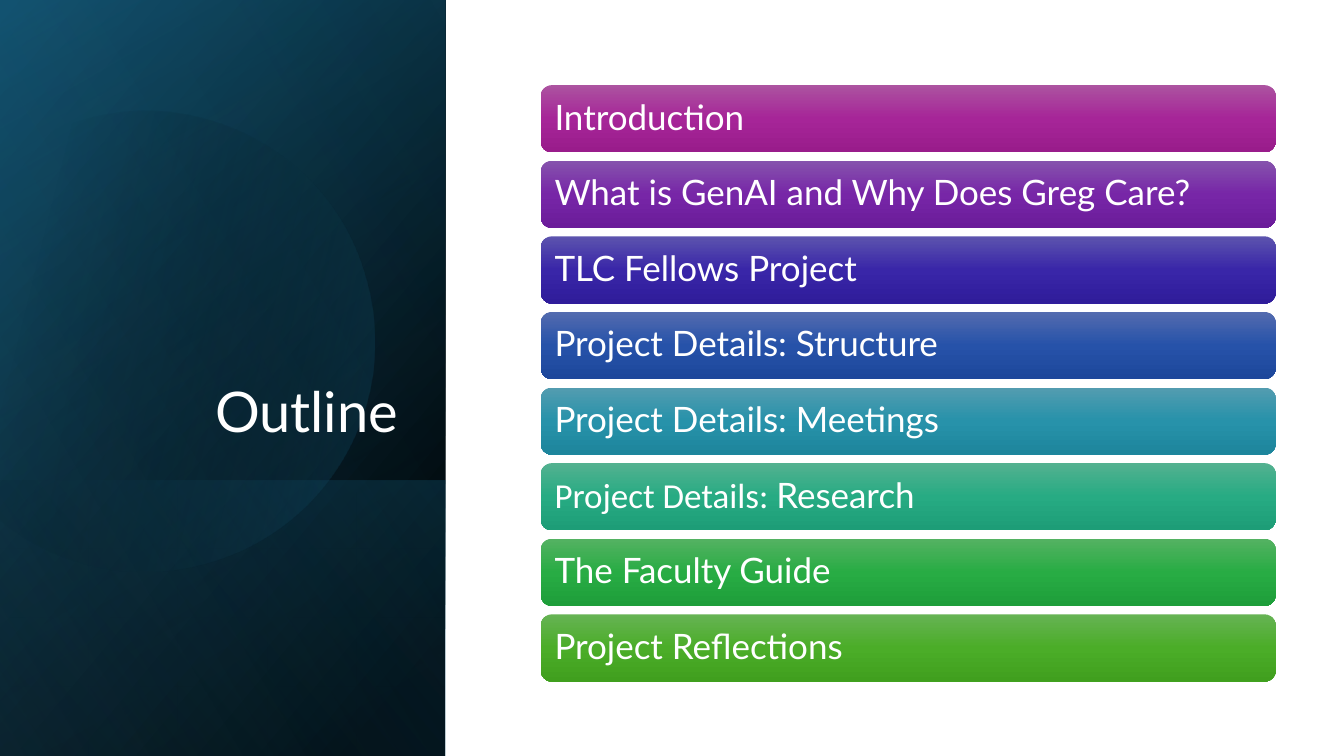
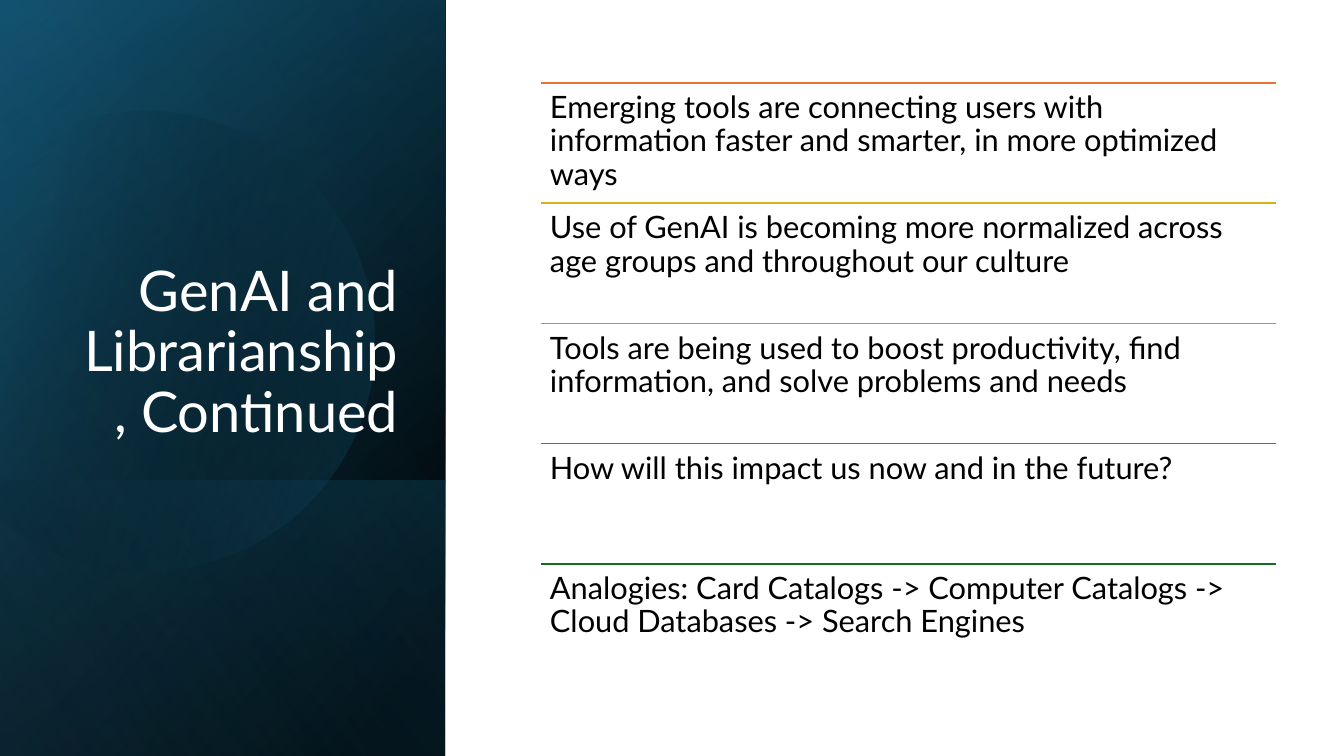
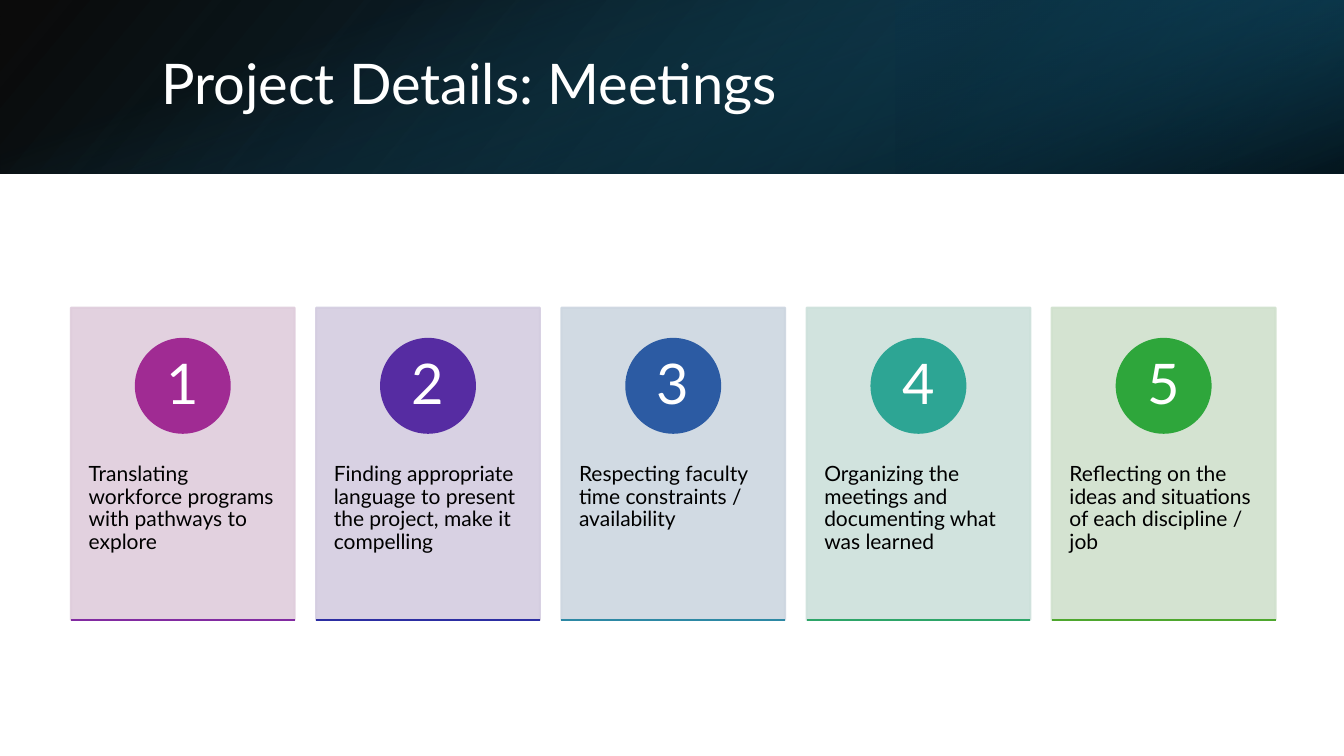
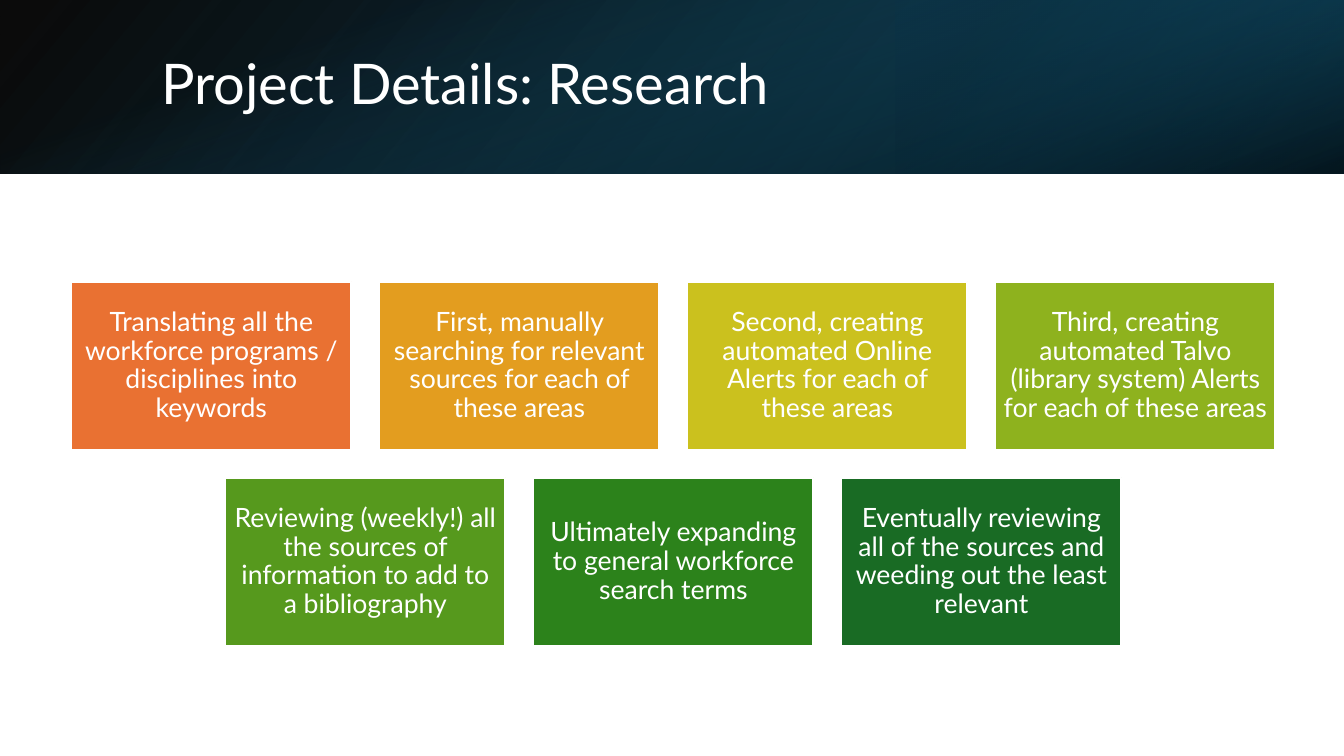
from math import cos, radians, sin

from lxml.etree import SubElement
from pptx import Presentation
from pptx.dml.color import RGBColor
from pptx.enum.shapes import MSO_CONNECTOR, MSO_SHAPE
from pptx.enum.text import MSO_ANCHOR, PP_ALIGN
from pptx.oxml import parse_xml
from pptx.oxml.ns import nsdecls, qn
from pptx.util import Pt

COLORS = {
    "white": "FFFFFF", "black": "000000",
    "navy": "104862", "teal": "156082", "deep": "0B3041", "sky": "46B1E1",
    "magenta_light": "AC53A0", "magenta": "A62598", "magenta_dark": "991C8B",
    "purple_light": "8653AD", "purple": "7726A7", "purple_dark": "6B1C9A",
    "indigo_light": "5C53AE", "indigo": "3926A8", "indigo_dark": "2F1C9A",
    "blue_light": "536BAF", "blue": "2652A9", "blue_dark": "1D479B",
    "cyan_light": "539CB0", "cyan": "2792AA", "cyan_dark": "1D859C",
    "mint_light": "53B190", "mint": "27AB83", "mint_dark": "1D9D77",
    "green_light": "54B262", "green": "28AC44", "green_dark": "1E9E3A",
    "lime_light": "66B354", "lime": "4BAD28", "lime_dark": "409F1E",
    "orange": "E97132", "amber": "E39D1F", "gold": "D8B11D", "yellow": "CBC11E",
    "olive": "8EB21E", "moss": "408E1C", "leaf": "56991D", "grass": "2C821B",
    "forest": "196B24",
    "card1": "DFCDDC", "circle1": "A02B93", "rule1": "822BA1",
    "card2": "D4CDE0", "circle2": "562CA2", "rule2": "2C2EA2",
    "card3": "CDD6E0", "circle3": "2C5BA3", "rule3": "2D88A4",
    "card4": "CDE1DB", "circle4": "2DA594", "rule4": "2DA568",
    "card5": "D0E1CD", "circle5": "2EA63B", "rule5": "4EA72E",
}
FONT = "Lato"

OUTLINE = [
    ("magenta", [("Introduction", FONT)]),
    ("purple", [("What is GenAI and Why Does Greg Care?", FONT)]),
    ("indigo", [("TLC Fellows Project", FONT)]),
    ("blue", [("Project Details: Structure", FONT)]),
    ("cyan", [("Project Details: Meetings", FONT)]),
    ("mint", [("Project Details: ", "Calibri"), ("Research", FONT)]),
    ("green", [("The Faculty Guide", FONT)]),
    ("lime", [("Project Reflections", FONT)]),
]
LIBRARIANSHIP = [
    ("orange", "Emerging tools are connecting users with information faster and smarter, in more optimized ways"),
    ("gold", "Use of GenAI is becoming more normalized across age groups and throughout our culture"),
    ("olive", "Tools are being used to boost productivity, find information, and solve problems and needs"),
    ("moss", "How will this impact us now and in the future?"),
    ("forest", "Analogies: Card Catalogs -> Computer Catalogs -> Cloud Databases -> Search Engines"),
]
MEETINGS = [
    "Translating workforce programs with pathways to explore",
    "Finding appropriate language to present the project, make it compelling",
    "Respecting faculty time constraints / availability",
    "Organizing the meetings and documenting what was learned",
    "Reflecting on the ideas and situations of each discipline / job",
]
RESEARCH = [
    [
        ("orange", "Translating all the workforce programs / disciplines into keywords"),
        ("amber", "First, manually searching for relevant sources for each of these areas"),
        ("yellow", "Second, creating automated Online Alerts for each of these areas"),
        ("olive", "Third, creating automated Talvo (library system) Alerts for each of these areas"),
    ],
    [
        ("leaf", "Reviewing (weekly!) all the sources of information to add to a bibliography"),
        ("grass", "Ultimately expanding to general workforce search terms"),
        ("forest", "Eventually reviewing all of the sources and weeding out the least relevant"),
    ],
]

PANEL = (-111, 111, 540, 318)
PANEL_LAYERS = [
    (PANEL, [(8, "black", 100), (100, "navy", 100)], 50),
    (PANEL, [(0, "black", 0), (99, "teal", 46)], 30),
    ((60.5, 282.5, 197, 318), [(2, "teal", 29), (100, "black", 30)], 130),
]
PANEL_GLOW = [(0, "black", 0), (99, "sky", 11)]
DISC_GLOW = [(29, "black", 0), (100, "teal", 43)]
DISC_CENTER = (114, 241)
DISC_TURN = 16.1
DISC_START = (107, 79)
DISC_SEGMENTS = [
    [(177, 81), (241, 127), (261, 198)],
    [(287, 286), (236, 377), (149, 402)],
    [(94, 418), (38, 404), (-2, 370)],
    [(-11, 362)],
    [(-11, 126)],
    [(0, 116)],
    [(17, 102), (36, 92), (58, 86)],
    [(74, 81), (91, 79), (107, 79)],
]
BAND_LAYERS = [
    ((0, 0, 960, 124), [(0, "black", 96), (100, "navy", 100)], 140, 0, True),
    ((640, 0, 320, 124), [(19, "deep", 68), (100, "teal", 79)], 320, 180, True),
    ((418, -418, 124, 960), [(23, "teal", 0), (99, "black", 74)], 340, 90, False),
]
CONTENT_LEFT, CONTENT_WIDTH = 386.25, 525


def rgb(name):
    return RGBColor.from_string(COLORS[name])


def points(values):
    return [Pt(value) for value in values]


def add_shape(slide, kind, box, fill=None, line=None):
    shape = slide.shapes.add_shape(kind, *points(box))
    shape.shadow.inherit = False
    if fill:
        shape.fill.solid()
        shape.fill.fore_color.rgb = rgb(fill)
    if line:
        shape.line.color.rgb = rgb(line)
        shape.line.width = Pt(1.5)
    else:
        shape.line.fill.background()
    return shape


def set_gradient(shape, stops, angle):
    shape.fill.background()
    marks = "".join(
        f'<a:gs pos="{position * 1000}"><a:srgbClr val="{COLORS[color]}">'
        f'<a:alpha val="{alpha * 1000}"/></a:srgbClr></a:gs>'
        for position, color, alpha in stops
    )
    gradient = parse_xml(
        f'<a:gradFill {nsdecls("a")} rotWithShape="1"><a:gsLst>{marks}</a:gsLst>'
        f'<a:lin ang="{angle * 60000}" scaled="0"/></a:gradFill>'
    )
    properties = shape.element.spPr
    properties.replace(properties.find(qn("a:noFill")), gradient)


def add_layer(slide, box, stops, angle, rotation=90, flipped=True):
    layer = add_shape(slide, MSO_SHAPE.RECTANGLE, box)
    set_gradient(layer, stops, angle)
    layer.rotation = rotation
    if flipped:
        layer.element.spPr.xfrm.set("flipH", "1")


def write(shape, runs, size, color="white", align=PP_ALIGN.LEFT,
          anchor=MSO_ANCHOR.MIDDLE, insets=(7.2, 3.6, 7.2, 3.6)):
    frame = shape.text_frame
    frame.word_wrap = True
    frame.vertical_anchor = anchor
    (frame.margin_left, frame.margin_top,
     frame.margin_right, frame.margin_bottom) = points(insets)
    paragraph = frame.paragraphs[0]
    paragraph.alignment = align
    paragraph.line_spacing = 0.9
    for text, font in runs:
        run = paragraph.add_run()
        run.text = text
        run.font.name = font
        run.font.size = Pt(size)
        run.font.color.rgb = rgb(color)


def add_text(slide, box, text, size, **style):
    write(slide.shapes.add_textbox(*points(box)), [(text, FONT)], size, **style)


def add_rule(slide, left, top, width, color, weight):
    rule = slide.shapes.add_connector(
        MSO_CONNECTOR.STRAIGHT, *points((left, top, left + width, top)))
    rule.line.color.rgb = rgb(color)
    rule.line.width = Pt(weight)
    SubElement(rule.element.spPr, qn("a:effectLst"))


def turn(point):
    angle = radians(DISC_TURN)
    across, down = (value - middle for value, middle in zip(point, DISC_CENTER))
    return (Pt(DISC_CENTER[0] + across * cos(angle) - down * sin(angle)),
            Pt(DISC_CENTER[1] + across * sin(angle) + down * cos(angle)))


def add_disc(slide):
    builder = slide.shapes.build_freeform(*turn(DISC_START), scale=1.0)
    builder.add_line_segments(
        [turn(point) for segment in DISC_SEGMENTS for point in segment], close=True)
    disc = builder.convert_to_shape()
    lines = iter(list(disc.element.iter(qn("a:lnTo"))))
    for segment in DISC_SEGMENTS:
        parts = [next(lines) for _ in segment]
        if len(parts) == 3:
            curve = parse_xml(f'<a:cubicBezTo {nsdecls("a")}/>')
            parts[0].addprevious(curve)
            for part in parts:
                curve.append(part[0])
                part.getparent().remove(part)
    disc.shadow.inherit = False
    disc.line.fill.background()
    set_gradient(disc, DISC_GLOW, 30)
    disc.rotation = 360 - DISC_TURN


def add_blank(presentation):
    return presentation.slides.add_slide(presentation.slide_layouts[6])


def add_panel_slide(presentation, title):
    slide = add_blank(presentation)
    for layer in PANEL_LAYERS:
        add_layer(slide, *layer)
    add_disc(slide)
    add_layer(slide, PANEL, PANEL_GLOW, 120)
    add_text(slide, (46, 132.5, 245.5, 188.6), title, 40,
             align=PP_ALIGN.RIGHT, anchor=MSO_ANCHOR.BOTTOM)
    return slide


def add_band_slide(presentation, title):
    slide = add_blank(presentation)
    for layer in BAND_LAYERS:
        add_layer(slide, *layer)
    add_text(slide, (108, 27, 790, 69), title, 40)
    return slide


def build_outline(presentation):
    slide = add_panel_slide(presentation, "Outline")
    for index, (color, runs) in enumerate(OUTLINE):
        box = (CONTENT_LEFT, 60.8 + 54 * index, CONTENT_WIDTH, 48)
        bar = add_shape(slide, MSO_SHAPE.ROUNDED_RECTANGLE, box)
        set_gradient(bar, [(0, f"{color}_light", 100), (50, color, 100),
                           (100, f"{color}_dark", 100)], 90)
        write(bar, runs, 25, insets=(7.5, 5, 7.5, 5))


def build_librarianship(presentation):
    slide = add_panel_slide(presentation, "GenAI and Librarianship, Continued")
    pitch = 85.9
    for index, (color, text) in enumerate(LIBRARIANSHIP):
        top = 59.2 + pitch * index
        add_rule(slide, CONTENT_LEFT, top, CONTENT_WIDTH, color, 1)
        add_text(slide, (CONTENT_LEFT, top, CONTENT_WIDTH, pitch), text, 22,
                 color="black", anchor=MSO_ANCHOR.TOP, insets=(6.6,) * 4)


def build_meetings(presentation):
    slide = add_band_slide(presentation, "Project Details: Meetings")
    top, width, height, pitch, diameter = 219.8, 159.8, 223, 175.15, 67
    for index, text in enumerate(MEETINGS):
        number = index + 1
        left = 50.7 + pitch * index
        card = add_shape(slide, MSO_SHAPE.RECTANGLE, (left, top, width, height),
                         f"card{number}", f"card{number}")
        for color in card.element.spPr.iter(qn("a:srgbClr")):
            SubElement(color, qn("a:alpha")).set("val", "90000")
        write(card, [(text, FONT)], 15, "black", anchor=MSO_ANCHOR.TOP,
              insets=(12.6, 111.2, 12.4, 26))
        circle = add_shape(
            slide, MSO_SHAPE.OVAL,
            (left + (width - diameter) / 2, top + 22.3, diameter, diameter),
            f"circle{number}", f"circle{number}")
        write(circle, [(str(number), FONT)], 40, align=PP_ALIGN.CENTER,
              insets=(0, 1, 0, 0))
        add_rule(slide, left, top + height, width, f"rule{number}", 1.5)


def build_research(presentation):
    slide = add_band_slide(presentation, "Project Details: Research")
    center, top, width, height, gap = 481, 201.4, 200, 120, 20
    for row, boxes in enumerate(RESEARCH):
        row_width = len(boxes) * (width + gap) - gap
        for column, (color, text) in enumerate(boxes):
            left = center - row_width / 2 + column * (width + gap)
            box = (left, top + row * (height + gap), width, height)
            tile = add_shape(slide, MSO_SHAPE.RECTANGLE, box, color, "white")
            write(tile, [(text, FONT)], 19, align=PP_ALIGN.CENTER, insets=(5.7,) * 4)


def main():
    presentation = Presentation()
    presentation.slide_width, presentation.slide_height = Pt(960), Pt(540)
    build_outline(presentation)
    build_librarianship(presentation)
    build_meetings(presentation)
    build_research(presentation)
    presentation.save("out.pptx")


if __name__ == "__main__":
    main()
